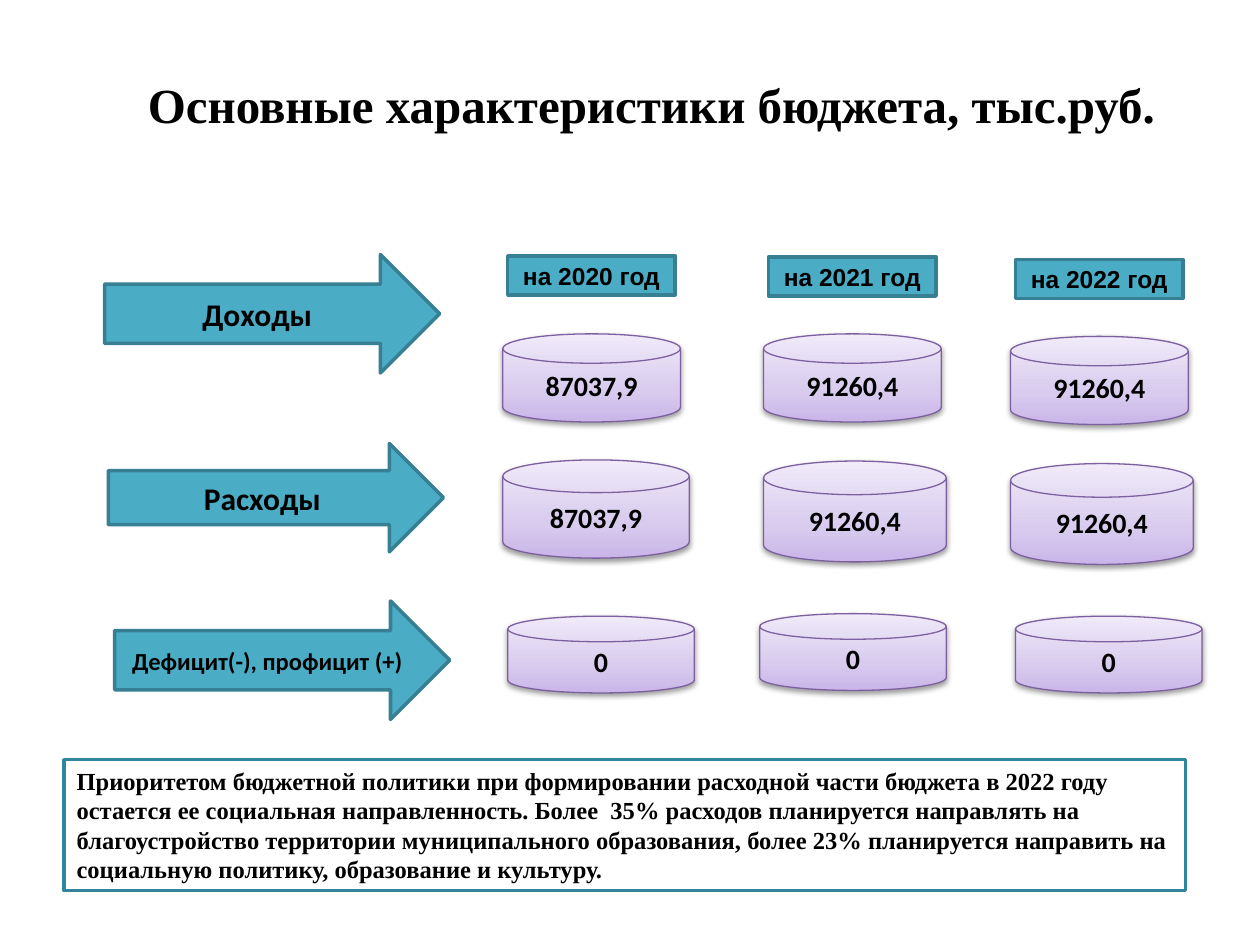
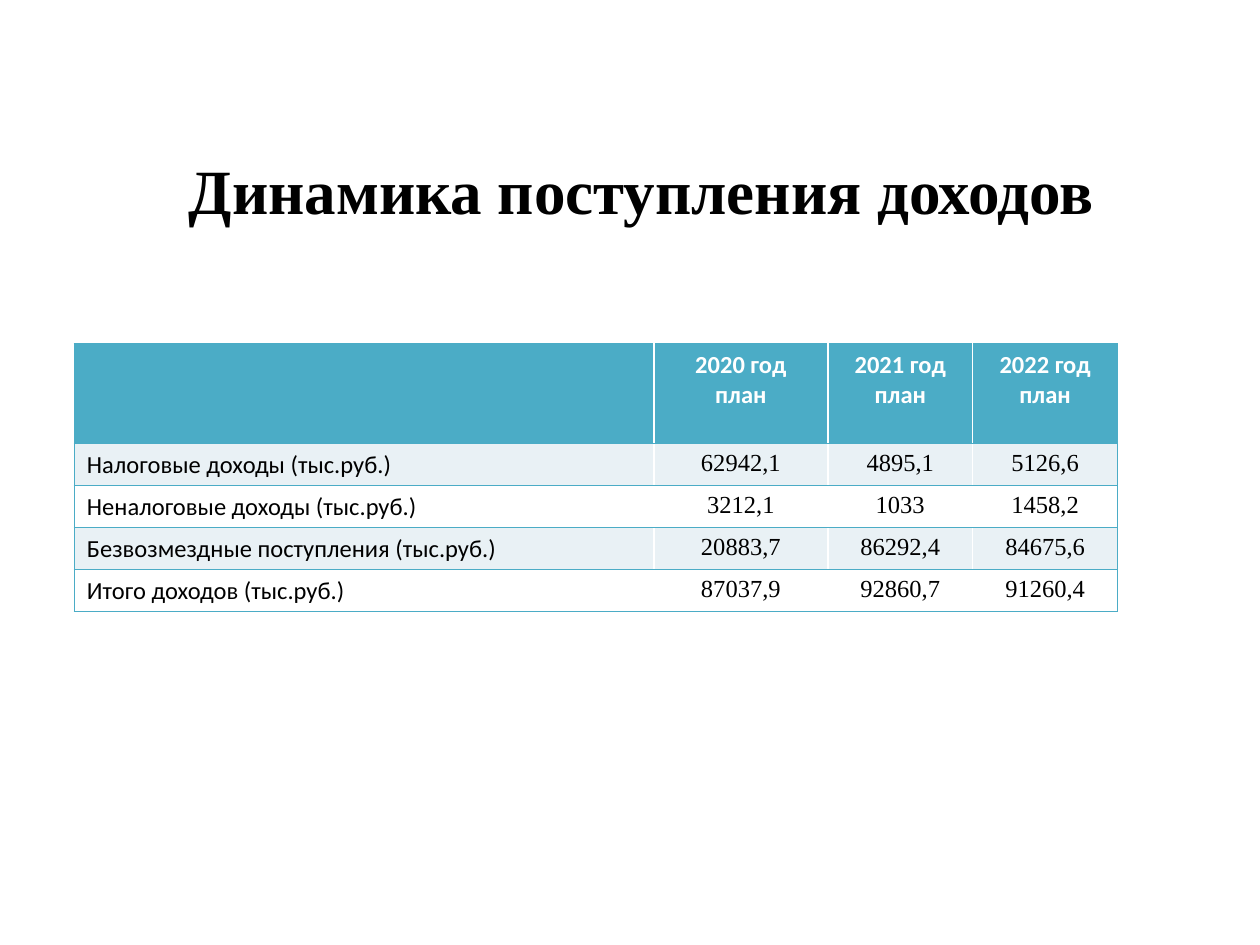
from pptx import Presentation
from pptx.dml.color import RGBColor
from pptx.enum.shapes import MSO_SHAPE
from pptx.enum.text import MSO_ANCHOR, PP_ALIGN
from pptx.oxml import parse_xml
from pptx.oxml.ns import nsdecls, qn
from pptx.util import Inches, Pt

BLACK = RGBColor(0x00, 0x00, 0x00)
WHITE = RGBColor(0xFF, 0xFF, 0xFF)
TEAL = RGBColor(0x4B, 0xAC, 0xC6)
TEAL_DARK = RGBColor(0x37, 0x7F, 0x92)
TEAL_FRAME = RGBColor(0x31, 0x85, 0x9C)
PALE_BLUE = RGBColor(0xE9, 0xF1, 0xF5)
PURPLE = RGBColor(0x7D, 0x60, 0xA0)

ARROW = MSO_SHAPE.RIGHT_ARROW
RECTANGLE = MSO_SHAPE.RECTANGLE
DISK = MSO_SHAPE.FLOWCHART_MAGNETIC_DISK
LEFT, CENTER = PP_ALIGN.LEFT, PP_ALIGN.CENTER
TOP, MIDDLE = MSO_ANCHOR.TOP, MSO_ANCHOR.MIDDLE
SERIF, SANS, LABEL_FONT = "Times New Roman", "Calibri", "Arial"

DISK_FILL = f"""<a:gradFill {nsdecls('a')} rotWithShape="1"><a:gsLst>
<a:gs pos="0"><a:srgbClr val="C9B5E8"/></a:gs>
<a:gs pos="35000"><a:srgbClr val="D8CBEE"/></a:gs>
<a:gs pos="100000"><a:srgbClr val="F0EAF9"/></a:gs>
</a:gsLst><a:lin ang="16200000" scaled="1"/></a:gradFill>"""
DISK_SHADOW = f"""<a:outerShdw {nsdecls('a')} blurRad="40000" dist="20000" dir="5400000" rotWithShape="0">
<a:srgbClr val="000000"><a:alpha val="38000"/></a:srgbClr></a:outerShdw>"""


def write_text(frame, text, size, font, color=BLACK, bold=True, align=CENTER):
    frame.word_wrap = True
    for index, line in enumerate(text.split("\n")):
        paragraph = frame.add_paragraph() if index else frame.paragraphs[0]
        paragraph.alignment = align
        run = paragraph.add_run()
        run.text = line
        run.font.size = Pt(size)
        run.font.name = font
        run.font.bold = bold
        run.font.color.rgb = color


def add_box(slide, kind, left, top, width, height, fill, line, line_width):
    shape = slide.shapes.add_shape(kind, Inches(left), Inches(top), Inches(width), Inches(height))
    shape.shadow.inherit = False
    if fill is not None:
        shape.fill.solid()
        shape.fill.fore_color.rgb = fill
    shape.line.color.rgb = line
    shape.line.width = Pt(line_width)
    shape.text_frame.vertical_anchor = MIDDLE
    return shape


presentation = Presentation()
presentation.slide_width = Inches(10)
presentation.slide_height = Inches(7.5)

# Slides with their titles
titles = [
    ("Основные характеристики бюджета, тыс.руб.", 0.67, 0.59, 1.1, 28),
    ("Динамика поступления доходов", 0.59, 1.2, 1.28, 36),
]
slides = []
for text, left, top, height, size in titles:
    slide = presentation.slides.add_slide(presentation.slide_layouts[6])
    title = slide.shapes.add_textbox(Inches(left), Inches(top), Inches(9), Inches(height))
    title.text_frame.margin_top = 0
    title.text_frame.vertical_anchor = TOP
    write_text(title.text_frame, text, size, SERIF)
    slides.append(slide)
budget_slide, income_slide = slides

# Budget: arrows naming the rows
arrows = [
    ("Доходы", 0.83, 2.02, 0.94, 18),
    ("Расходы", 0.86, 3.52, 0.86, 18),
    ("Дефицит(-), профицит (+)", 0.91, 4.77, 0.94, 14),
]
for text, left, top, height, size in arrows:
    arrow = add_box(budget_slide, ARROW, left, top, 2.66, height, TEAL, TEAL_DARK, 2)
    write_text(arrow.text_frame, text, size, SANS)

# Budget: a year label and three disks (left, top, width, height) per column
years = [
    ("на 2020 год", 4.03, 2.03, [
        ("87037,9", 3.99, 2.65, 1.41, 0.7),
        ("87037,9", 3.99, 3.65, 1.48, 0.78),
        ("0", 4.03, 4.89, 1.48, 0.61)]),
    ("на 2021 год", 6.1, 2.04, [
        ("91260,4", 6.06, 2.65, 1.41, 0.7),
        ("91260,4", 6.06, 3.66, 1.45, 0.8),
        ("0", 6.03, 4.87, 1.48, 0.61)]),
    ("на 2022 год", 8.06, 2.06, [
        ("91260,4", 8.02, 2.67, 1.41, 0.7),
        ("91260,4", 8.02, 3.68, 1.45, 0.8),
        ("0", 8.06, 4.89, 1.48, 0.61)]),
]
for year, left, top, disks in years:
    label = add_box(budget_slide, RECTANGLE, left, top, 1.33, 0.31, TEAL, TEAL_DARK, 2)
    write_text(label.text_frame, year, 14, LABEL_FONT)
    for amount, *position in disks:
        disk = add_box(budget_slide, DISK, *position, None, PURPLE, 0.75)
        properties = disk._element.spPr
        properties.find(qn("a:prstGeom")).addnext(parse_xml(DISK_FILL))
        properties.find(qn("a:effectLst")).append(parse_xml(DISK_SHADOW))
        write_text(disk.text_frame, amount, 16, SANS)

# Budget: priority note
note = add_box(budget_slide, RECTANGLE, 0.51, 6.03, 8.9, 1.04, WHITE, TEAL_FRAME, 2)
note.text_frame.vertical_anchor = TOP
write_text(
    note.text_frame,
    "Приоритетом бюджетной политики при формировании расходной части бюджета в 2022 году "
    "остается ее социальная направленность. Более  35% расходов планируется направлять на "
    "благоустройство территории муниципального образования, более 23% планируется направить на "
    "социальную политику, образование и культуру.",
    14, SERIF, align=LEFT)

# Income: table
rows = [
    ("", "2020 год\nплан", "2021 год план", "2022 год план"),
    ("Налоговые доходы (тыс.руб.)", "62942,1", "4895,1", "5126,6"),
    ("Неналоговые доходы (тыс.руб.)", "3212,1", "1033", "1458,2"),
    ("Безвозмездные поступления (тыс.руб.)", "20883,7", "86292,4", "84675,6"),
    ("Итого доходов (тыс.руб.)", "87037,9", "92860,7", "91260,4"),
]
column_widths = [4.6, 1.38, 1.15, 1.15]
table = income_slide.shapes.add_table(
    len(rows), len(column_widths), Inches(0.59), Inches(2.73), Inches(8.28), Inches(2.13)).table
for column, width in zip(table.columns, column_widths):
    column.width = Inches(width)

for row_index, texts in enumerate(rows):
    is_header = row_index == 0
    table.rows[row_index].height = Inches(0.79 if is_header else 0.33)
    for column_index, text in enumerate(texts):
        cell = table.cell(row_index, column_index)
        is_name = column_index == 0
        if text:
            write_text(cell.text_frame, text, 14,
                       SANS if is_header or is_name else SERIF,
                       WHITE if is_header else BLACK, is_header,
                       LEFT if is_name else CENTER)
        cell.fill.solid()
        cell.fill.fore_color.rgb = TEAL if is_header else PALE_BLUE if row_index % 2 else WHITE

        # Borders go ahead of the fill, in the order left, right, top, bottom
        sides = ["lnT", "lnB"]
        if column_index == len(texts) - 1:
            sides.insert(0, "lnR")
        if is_name:
            sides.insert(0, "lnL")
        cell_properties = cell._tc.get_or_add_tcPr()
        for position, side in enumerate(sides):
            cell_properties.insert(position, parse_xml(
                f'<a:{side} {nsdecls("a")} w="12700"><a:solidFill>'
                f'<a:srgbClr val="{TEAL}"/></a:solidFill></a:{side}>'))

presentation.save("out.pptx")
